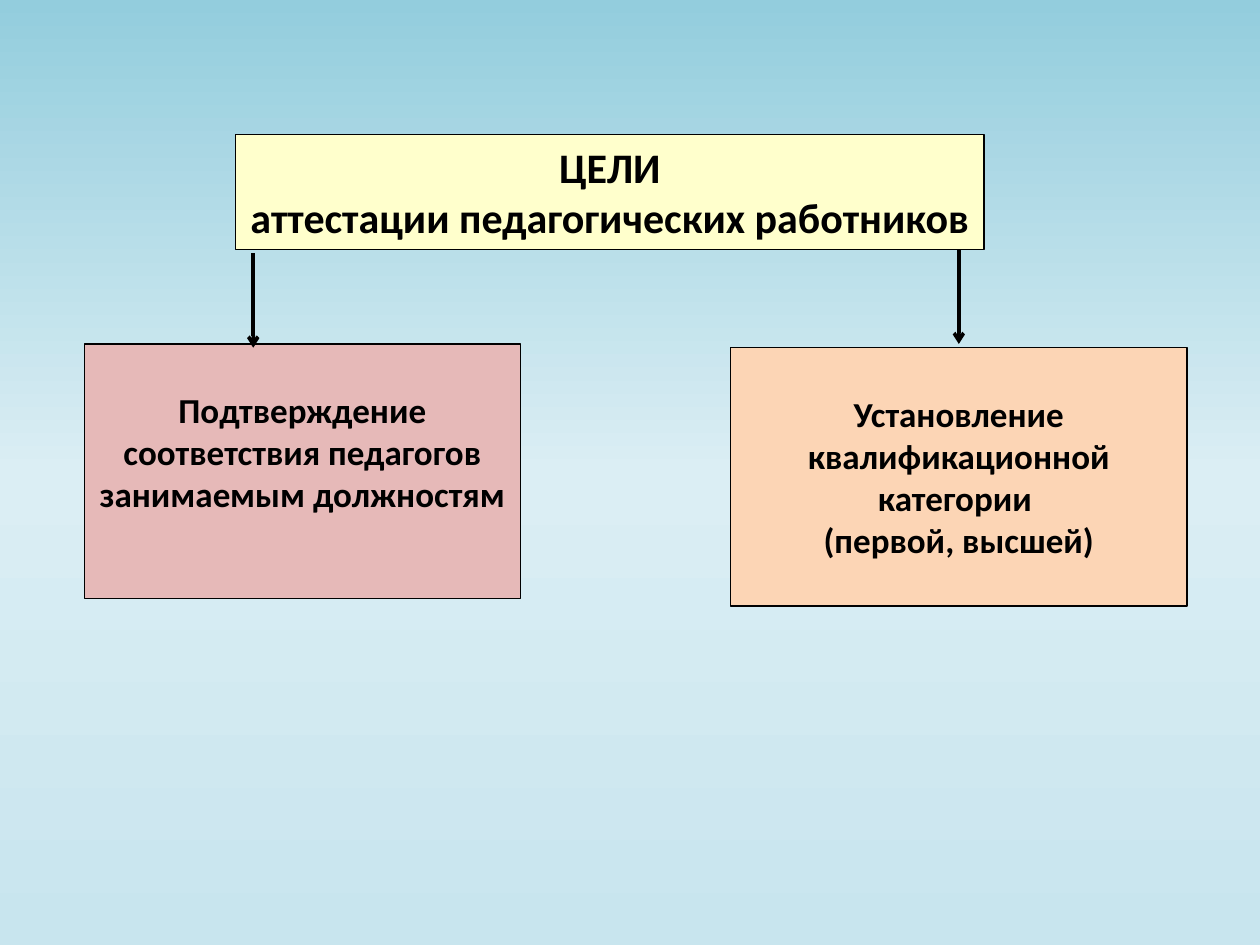
import copy

import pptx
import pptx.dml.color
import pptx.enum.shapes
import pptx.enum.text
import pptx.oxml.ns
import pptx.oxml.xmlchemy
import pptx.util
from lxml import etree

Pt = pptx.util.Pt
qn = pptx.oxml.ns.qn

COLORS = {
    "sky": "93CDDD", "pale": "DBEEF4", "mist": "C8E5EE",
    "pink": "E6B9B8", "peach": "FCD5B5", "cream": "FFFFCC", "black": "000000",
}
BACKGROUND = [(0, "sky"), (0.5, "pale"), (1, "mist")]
BOXES = [
    {"at": (48.24, 196.56, 249.12, 145.44), "fill": "pink", "size": 20, "top": 25.6, "wrap": True,
     "lines": ["Подтверждение соответствия педагогов занимаемым должностям"]},
    {"at": (417.6, 198.72, 260.64, 147.6), "fill": "peach", "size": 20, "top": 25.6, "wrap": True,
     "lines": ["Установление квалификационной категории ", "(первой, высшей)"]},
    {"at": (134.64, 77.04, 427.68, 65.52), "fill": "cream", "size": 24, "top": 3.6, "wrap": False,
     "lines": ["ЦЕЛИ", "аттестации педагогических работников"]},
]
ARROWS = [(144.72, 144.72), (547.92, 142.56)]
ARROW_LENGTH = 54


def rgb(name):
    return pptx.dml.color.RGBColor.from_string(COLORS[name])


def paint_background(s):
    fill = s.background.fill
    fill.gradient()
    fill.gradient_angle = 270
    stops = s._element.find(".//" + qn("a:gsLst"))
    stops.append(copy.deepcopy(stops[0]))
    for stop, (position, color) in zip(fill.gradient_stops, BACKGROUND):
        stop.position = position
        stop.color.rgb = rgb(color)


def add_box(s, box):
    sp = s.shapes.add_shape(pptx.enum.shapes.MSO_SHAPE.RECTANGLE, *map(Pt, box["at"]))
    sp.shadow.inherit = False
    sp.fill.solid()
    sp.fill.fore_color.rgb = rgb(box["fill"])
    sp.line.color.rgb = rgb("black")
    sp.line.width = Pt(0.75)
    tf = sp.text_frame
    tf.word_wrap = box["wrap"]
    tf.vertical_anchor = pptx.enum.text.MSO_ANCHOR.TOP
    tf.margin_top = Pt(box["top"])
    tf.text = "\n".join(box["lines"])
    for p in tf.paragraphs:
        p.alignment = pptx.enum.text.PP_ALIGN.CENTER
        p.font.name = "Calibri"
        p.font.size = Pt(box["size"])
        p.font.bold = True
        p.font.color.rgb = rgb("black")


def add_arrow(s, x, y):
    sp = s.shapes.add_connector(
        pptx.enum.shapes.MSO_CONNECTOR.STRAIGHT, Pt(x), Pt(y), Pt(x), Pt(y + ARROW_LENGTH))
    sp.line.color.rgb = rgb("black")
    sp.line.width = Pt(2)
    etree.SubElement(sp.line._get_or_add_ln(), qn("a:tailEnd"), type="arrow")
    etree.SubElement(sp._element.spPr, qn("a:effectLst"))


def main():
    prs = pptx.Presentation()
    prs.slide_width, prs.slide_height = Pt(720), Pt(540)
    s = prs.slides.add_slide(prs.slide_layouts[6])
    paint_background(s)
    for box in BOXES:
        add_box(s, box)
    for x, y in ARROWS:
        add_arrow(s, x, y)
    prs.save("out.pptx")


if __name__ == "__main__":
    main()
